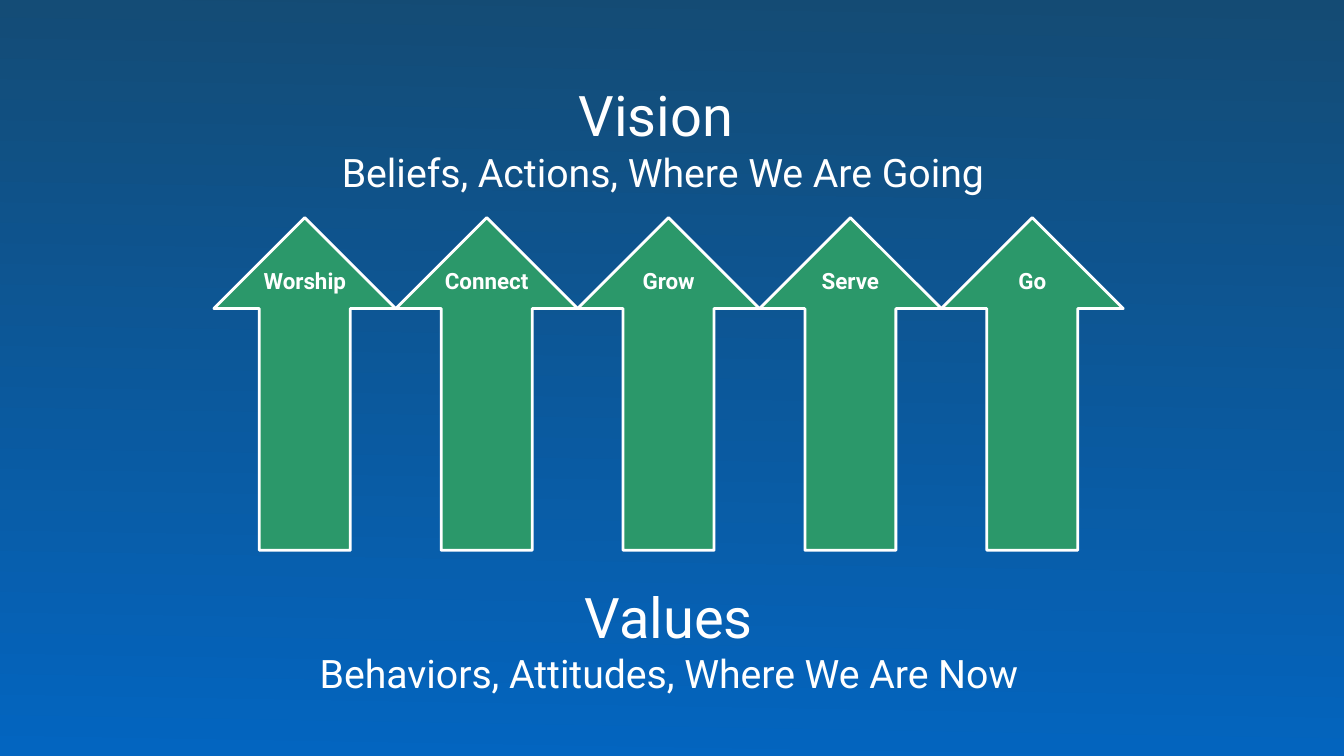
from dataclasses import dataclass

from pptx import Presentation
from pptx.dml.color import RGBColor
from pptx.enum.shapes import MSO_SHAPE
from pptx.enum.text import MSO_ANCHOR, MSO_AUTO_SIZE, PP_ALIGN
from pptx.util import Pt

VISION = ("Vision ", "Beliefs, Actions, Where We Are Going")
VALUES = ("Values", "Behaviors, Attitudes, Where We Are Now")
ARROWS = ["Worship", "Connect", "Grow", "Serve", "Go"]


@dataclass(frozen=True)
class Theme:
    font: str = "Roboto"
    white: RGBColor = RGBColor(0xFF, 0xFF, 0xFF)
    green: RGBColor = RGBColor(0x2B, 0x98, 0x6A)
    background_top: RGBColor = RGBColor(0x14, 0x4B, 0x74)
    background_bottom: RGBColor = RGBColor(0x03, 0x65, 0xC0)
    heading_size: int = 40
    subheading_size: int = 28
    label_size: int = 16
    outline: int = 2


THEME = Theme()
SLIDE_WIDTH, SLIDE_HEIGHT = 960, 540
ARROW_LEFT, ARROW_TOP = 152.8, 155.5
ARROW_WIDTH, ARROW_HEIGHT = 129.9, 237.6
VISION_BOX = (229, 54, 489, 90)
VALUES_BOX = (213.5, 412.5, 528.5, 90)


def format_paragraph(paragraph, size, bold=False):
    paragraph.alignment = PP_ALIGN.CENTER
    paragraph.font.name = THEME.font
    paragraph.font.size = Pt(size)
    paragraph.font.bold = bold
    paragraph.font.color.rgb = THEME.white


def paint_background(slide):
    fill = slide.background.fill
    fill.gradient()
    fill.gradient_angle = 269
    colors = (THEME.background_top, THEME.background_bottom)
    for position, (stop, color) in enumerate(zip(fill.gradient_stops, colors)):
        stop.position = position
        stop.color.rgb = color


def write_statement(shape, lines, box):
    shape.left, shape.top, shape.width, shape.height = map(Pt, box)
    frame = shape.text_frame
    frame.text = "\n".join(lines)
    frame.word_wrap = False
    frame.auto_size = MSO_AUTO_SIZE.SHAPE_TO_FIT_TEXT
    frame.vertical_anchor = MSO_ANCHOR.TOP
    sizes = (THEME.heading_size, THEME.subheading_size)
    for paragraph, size in zip(frame.paragraphs, sizes):
        format_paragraph(paragraph, size)


def add_arrow(slide, index, label):
    arrow = slide.shapes.add_shape(
        MSO_SHAPE.UP_ARROW,
        Pt(ARROW_LEFT + index * ARROW_WIDTH),
        Pt(ARROW_TOP),
        Pt(ARROW_WIDTH),
        Pt(ARROW_HEIGHT),
    )
    arrow.shadow.inherit = False
    arrow.fill.solid()
    arrow.fill.fore_color.rgb = THEME.green
    arrow.line.color.rgb = THEME.white
    arrow.line.width = Pt(THEME.outline)
    frame = arrow.text_frame
    frame.text = label
    frame.vertical_anchor = MSO_ANCHOR.TOP
    frame.margin_left = frame.margin_right = frame.margin_bottom = 0
    frame.margin_top = Pt(3)
    format_paragraph(frame.paragraphs[0], THEME.label_size, bold=True)


def main():
    presentation = Presentation()
    presentation.slide_width = Pt(SLIDE_WIDTH)
    presentation.slide_height = Pt(SLIDE_HEIGHT)
    slide = presentation.slides.add_slide(presentation.slide_layouts[5])
    paint_background(slide)
    for index, label in enumerate(ARROWS):
        add_arrow(slide, index, label)
    write_statement(slide.shapes.title, VISION, VISION_BOX)
    values = slide.shapes.add_textbox(*map(Pt, VALUES_BOX))
    write_statement(values, VALUES, VALUES_BOX)
    presentation.save("out.pptx")


if __name__ == "__main__":
    main()
